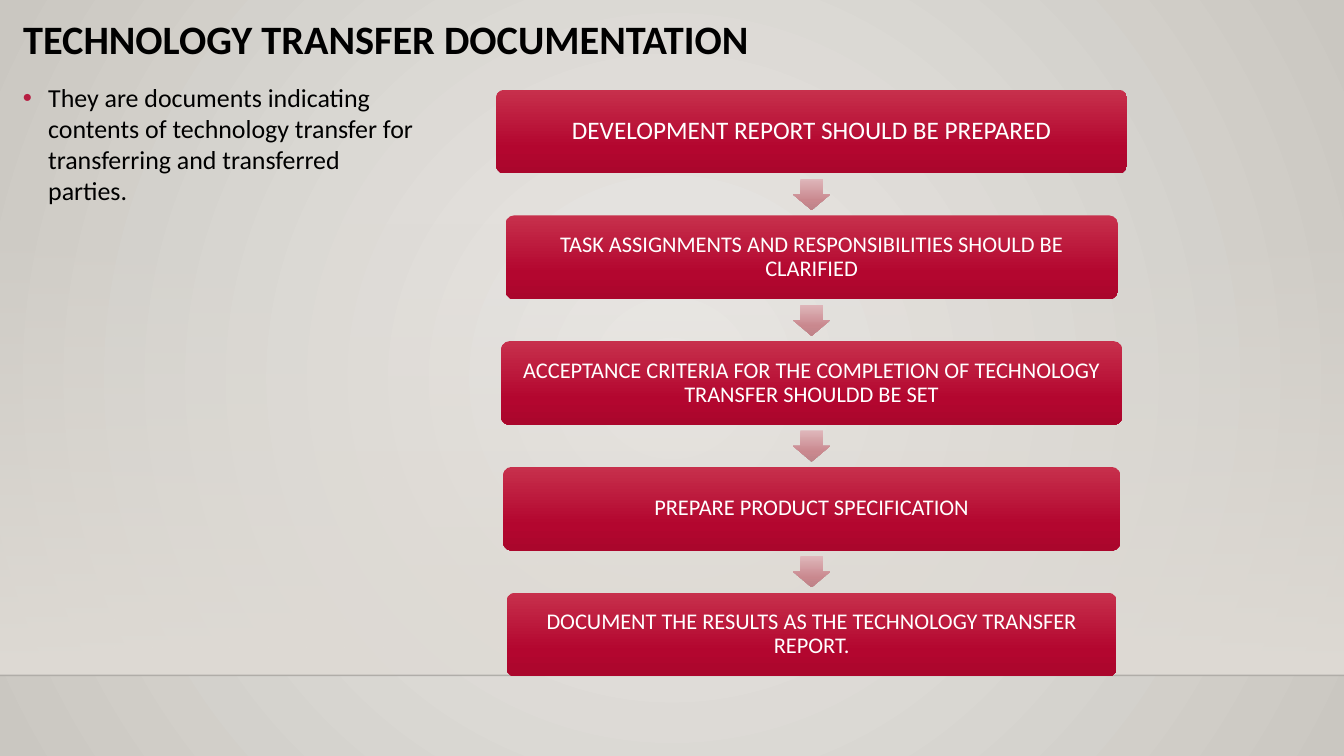
from lxml import etree
from pptx import Presentation
from pptx.dml.color import RGBColor
from pptx.enum import shapes, text
from pptx.oxml.ns import qn
from pptx.util import Inches, Pt

TITLE = "TECHNOLOGY TRANSFER DOCUMENTATION"
INTRO = ("They are documents indicating contents of technology transfer for "
         "transferring and transferred parties.")
STEPS = [
    ("DEVELOPMENT REPORT SHOULD BE PREPARED", 6.26, 18),
    ("TASK ASSIGNMENTS AND RESPONSIBILITIES SHOULD BE CLARIFIED", 6.07, 16),
    ("ACCEPTANCE CRITERIA FOR THE COMPLETION OF TECHNOLOGY TRANSFER SHOULDD BE SET", 6.16, 16),
    ("PREPARE PRODUCT SPECIFICATION", 6.12, 16),
    ("DOCUMENT THE RESULTS AS THE TECHNOLOGY TRANSFER REPORT.", 6.05, 16),
]

FONT = "Calibri"
BLACK = RGBColor(0x00, 0x00, 0x00)
WHITE = RGBColor(0xFF, 0xFF, 0xFF)
ACCENT = RGBColor(0xB7, 0x1E, 0x42)
SAND = RGBColor(0xDF, 0xDB, 0xD5)
BACKDROP = [(0, RGBColor(0xEC, 0xEA, 0xE7)), (100, RGBColor(0xCA, 0xC7, 0xC1))]
BAND = [(0, SAND, 0), (100, SAND)]
BOX = [(0, RGBColor(0xC7, 0x30, 0x4C)), (69, RGBColor(0xB3, 0x06, 0x2F)),
       (100, RGBColor(0xAA, 0x06, 0x2C))]
ARROW = [(0, RGBColor(0xDF, 0xB7, 0xBB)), (69, RGBColor(0xC9, 0x88, 0x8E)),
         (100, RGBColor(0xBE, 0x82, 0x88))]

SLIDE_W, SLIDE_H = 13.33, 7.5
FLOOR_Y, BAND_Y = 6.7, 2.21
CENTER_X = 8.05
FIRST_Y, LAST_Y, BOX_H = 0.89, 5.88, 0.83
ARROW_W, ARROW_H = 0.37, 0.31
PITCH = (LAST_Y - FIRST_Y) / (len(STEPS) - 1)


def add(parent, tag, **attrs):
    return etree.SubElement(parent, qn(tag), {k: str(v) for k, v in attrs.items()})


def set_gradient(fill, element, stops, radial=False):
    fill.gradient()
    grad = next(element.iter(qn("a:gradFill")))
    for child in list(grad):
        grad.remove(child)
    stop_list = add(grad, "a:gsLst")
    for pos, color, *alpha in stops:
        clr = add(add(stop_list, "a:gs", pos=pos * 1000), "a:srgbClr", val=color)
        if alpha:
            add(clr, "a:alpha", val=alpha[0] * 1000)
    if radial:
        center = add(grad, "a:path", path="circle")
        add(center, "a:fillToRect", l=50000, t=50000, r=50000, b=50000)
    else:
        add(grad, "a:lin", ang=5400000, scaled=0)


def add_block(kind, x, y, w, h, stops):
    sp = s.shapes.add_shape(kind, Inches(x), Inches(y), Inches(w), Inches(h))
    sp.shadow.inherit = False
    sp.line.fill.background()
    set_gradient(sp.fill, sp.element, stops)
    return sp


def set_font(p, size, color, bold=False):
    p.font.name, p.font.size, p.font.bold = FONT, Pt(size), bold
    p.font.color.rgb = color


prs = Presentation()
prs.slide_width, prs.slide_height = Inches(SLIDE_W), Inches(SLIDE_H)
s = prs.slides.add_slide(prs.slide_layouts[5])
set_gradient(s.background.fill, s.element, BACKDROP, radial=True)

add_block(shapes.MSO_SHAPE.RECTANGLE, 0, BAND_Y, SLIDE_W, FLOOR_Y - BAND_Y, BAND)
floor = s.shapes.add_connector(shapes.MSO_CONNECTOR.STRAIGHT, 0, Inches(FLOOR_Y),
                               Inches(SLIDE_W), Inches(FLOOR_Y))
floor.line.width = Pt(1)
floor.line.color.rgb = BLACK
add(next(floor.element.iter(qn("a:srgbClr"))), "a:alpha", val=20000)
add(floor.element.spPr, "a:effectLst")

title = s.shapes.title
title.left, title.top, title.width, title.height = map(Inches, (0.13, 0.14, 10.51, 0.62))
tf = title.text_frame
tf.text = TITLE
tf.auto_size = text.MSO_AUTO_SIZE.NONE
tf.vertical_anchor = text.MSO_ANCHOR.TOP
p = tf.paragraphs[0]
p.alignment, p.line_spacing = text.PP_ALIGN.LEFT, 0.9
set_font(p, 28.8, BLACK, bold=True)

intro = s.shapes.add_textbox(*map(Inches, (0.13, 0.76, 4.14, 1.38)))
tf = intro.text_frame
tf.word_wrap = True
tf.text = INTRO
p = tf.paragraphs[0]
pPr = p._p.get_or_add_pPr()
pPr.set("marL", str(Inches(0.25)))
pPr.set("indent", str(-Inches(0.25)))
add(add(pPr, "a:buClr"), "a:srgbClr", val=ACCENT)
add(pPr, "a:buFont", typeface="Arial")
add(pPr, "a:buChar", char="•")
set_font(p, 18.5, BLACK)

for i, (label, width, size) in enumerate(STEPS):
    y = FIRST_Y + i * PITCH
    sp = add_block(shapes.MSO_SHAPE.ROUNDED_RECTANGLE, CENTER_X - width / 2, y,
                   width, BOX_H, BOX)
    sp.adjustments[0] = 0.1
    tf = sp.text_frame
    tf.word_wrap = True
    tf.vertical_anchor = text.MSO_ANCHOR.MIDDLE
    tf.margin_left = tf.margin_right = tf.margin_top = tf.margin_bottom = Inches(0.09)
    tf.text = label
    p = tf.paragraphs[0]
    p.alignment, p.line_spacing = text.PP_ALIGN.CENTER, 0.9
    set_font(p, size, WHITE)
    if i < len(STEPS) - 1:
        arrow_y = y + BOX_H + (PITCH - BOX_H - ARROW_H) / 2
        arrow = add_block(shapes.MSO_SHAPE.DOWN_ARROW, CENTER_X - ARROW_W / 2, arrow_y,
                          ARROW_W, ARROW_H, ARROW)
        arrow.adjustments[0], arrow.adjustments[1] = 0.6, 0.5

prs.save("out.pptx")
